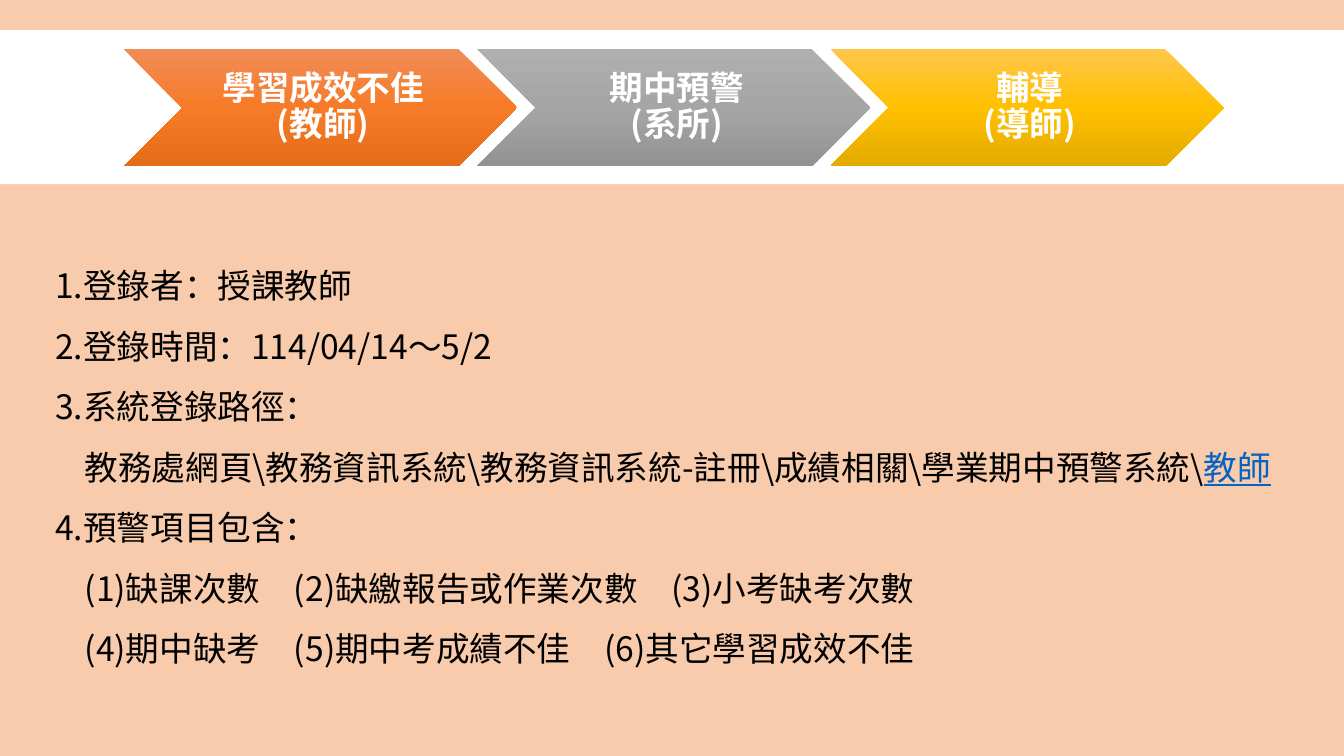
from copy import deepcopy

from lxml import etree
from pptx import Presentation
from pptx.dml.color import RGBColor
from pptx.enum.shapes import MSO_SHAPE
from pptx.enum.text import MSO_ANCHOR, MSO_AUTO_SIZE, PP_ALIGN
from pptx.oxml.ns import qn
from pptx.util import Pt

RECTANGLE = MSO_SHAPE.RECTANGLE
CHEVRON = MSO_SHAPE.CHEVRON
MIDDLE = MSO_ANCHOR.MIDDLE
CENTER = PP_ALIGN.CENTER
FIT_TEXT = MSO_AUTO_SIZE.SHAPE_TO_FIT_TEXT

FONT = "Noto Sans CJK SC"
PEACH = RGBColor(0xF8, 0xCB, 0xAD)
WHITE = RGBColor(0xFF, 0xFF, 0xFF)
BLACK = RGBColor(0x00, 0x00, 0x00)
LINK_BLUE = RGBColor(0x05, 0x63, 0xC1)
ORANGES = [RGBColor(0xF1, 0x8C, 0x57), RGBColor(0xF6, 0x7B, 0x28), RGBColor(0xE5, 0x6C, 0x19)]
GREYS = [RGBColor(0xAF, 0xAF, 0xAF), RGBColor(0xA5, 0xA5, 0xA5), RGBColor(0x93, 0x93, 0x93)]
GOLDS = [RGBColor(0xFF, 0xC6, 0x4B), RGBColor(0xFF, 0xC0, 0x00), RGBColor(0xE3, 0xAB, 0x00)]

SLIDE_WIDTH, SLIDE_HEIGHT = 960, 540
STEP_LEFT, STEP_TOP, STEP_WIDTH, STEP_HEIGHT = 88.5, 35.2, 280.8, 83.5
STEP_PITCH = 252.4
STEPS = [
    ("學習成效不佳\n(教師)", ORANGES),
    ("期中預警\n(系所)", GREYS),
    ("輔導\n(導師)", GOLDS),
]

INDENT = 21
LINK = "教師"
DETAILS = [
    ("1.登錄者：授課教師", 0, ""),
    ("2.登錄時間：114/04/14～5/2", 0, ""),
    ("3.系統登錄路徑：", 0, ""),
    ("教務處網頁\\教務資訊系統\\教務資訊系統-註冊\\成績相關\\學業期中預警系統\\", INDENT, LINK),
    ("4.預警項目包含：", 0, ""),
    ("(1)缺課次數　(2)缺繳報告或作業次數　(3)小考缺考次數", INDENT, ""),
    ("(4)期中缺考　(5)期中考成績不佳　(6)其它學習成效不佳", INDENT, ""),
]


def add_plain_shape(slide, kind, left, top, width, height):
    """Add a preset shape without shadow or outline."""
    shape = slide.shapes.add_shape(kind, Pt(left), Pt(top), Pt(width), Pt(height))
    shape.shadow.inherit = False
    shape.line.fill.background()
    return shape


def add_band(slide, top, height, color):
    """Add a solid band across the whole slide."""
    band = add_plain_shape(slide, RECTANGLE, 0, top, SLIDE_WIDTH, height)
    band.fill.solid()
    band.fill.fore_color.rgb = color


def fill_downward(shape, colors):
    """Fill a shape with three evenly spaced colours from top to bottom."""
    shape.fill.gradient()
    shape.fill.gradient_angle = 270
    first_stop = shape.element.spPr.find(".//" + qn("a:gs"))
    first_stop.addnext(deepcopy(first_stop))
    for stop, position, color in zip(shape.fill.gradient_stops, (0, 0.5, 1), colors):
        stop.position = position
        stop.color.rgb = color


def style_paragraph(paragraph, color, spacing, bold=False):
    """Set the font and line spacing of a paragraph."""
    paragraph.line_spacing = spacing
    font = paragraph.font
    font.size = Pt(24)
    font.bold = bold
    font.color.rgb = color
    font.name = FONT
    defaults = paragraph._p.pPr.find(qn("a:defRPr"))
    etree.SubElement(defaults, qn("a:ea")).set("typeface", FONT)


def add_step(slide, index, label, colors):
    """Add one chevron of the process with its label."""
    left = STEP_LEFT + index * STEP_PITCH
    step = add_plain_shape(slide, CHEVRON, left, STEP_TOP, STEP_WIDTH, STEP_HEIGHT)
    fill_downward(step, colors)
    frame = step.text_frame
    frame.word_wrap = True
    frame.vertical_anchor = MIDDLE
    frame.margin_left = Pt(7.2)
    frame.margin_right = frame.margin_top = frame.margin_bottom = Pt(3)
    paragraph = frame.paragraphs[0]
    paragraph.text = label
    paragraph.alignment = CENTER
    style_paragraph(paragraph, WHITE, 0.9, bold=True)


def add_details(slide):
    """Add the numbered details below the process."""
    details = slide.shapes.add_textbox(Pt(32.4), Pt(171.4), Pt(897.8), Pt(312.5))
    frame = details.text_frame
    frame.word_wrap = True
    frame.auto_size = FIT_TEXT
    for index, (wording, indent, link) in enumerate(DETAILS):
        paragraph = frame.add_paragraph() if index else frame.paragraphs[0]
        paragraph.text = wording
        style_paragraph(paragraph, BLACK, 1.5)
        if indent:
            paragraph._p.pPr.set("marL", str(Pt(indent)))
        if link:
            link_run = paragraph.add_run()
            link_run.text = link
            link_run.font.color.rgb = LINK_BLUE
            link_run.font.underline = True


def main():
    """Build the slide and save it."""
    presentation = Presentation()
    presentation.slide_width = Pt(SLIDE_WIDTH)
    presentation.slide_height = Pt(SLIDE_HEIGHT)
    slide = presentation.slides.add_slide(presentation.slide_layouts[6])
    add_band(slide, 0, SLIDE_HEIGHT, PEACH)
    add_band(slide, 21.6, 110, WHITE)
    for index, (label, colors) in enumerate(STEPS):
        add_step(slide, index, label, colors)
    add_details(slide)
    presentation.save("out.pptx")


if __name__ == "__main__":
    main()
